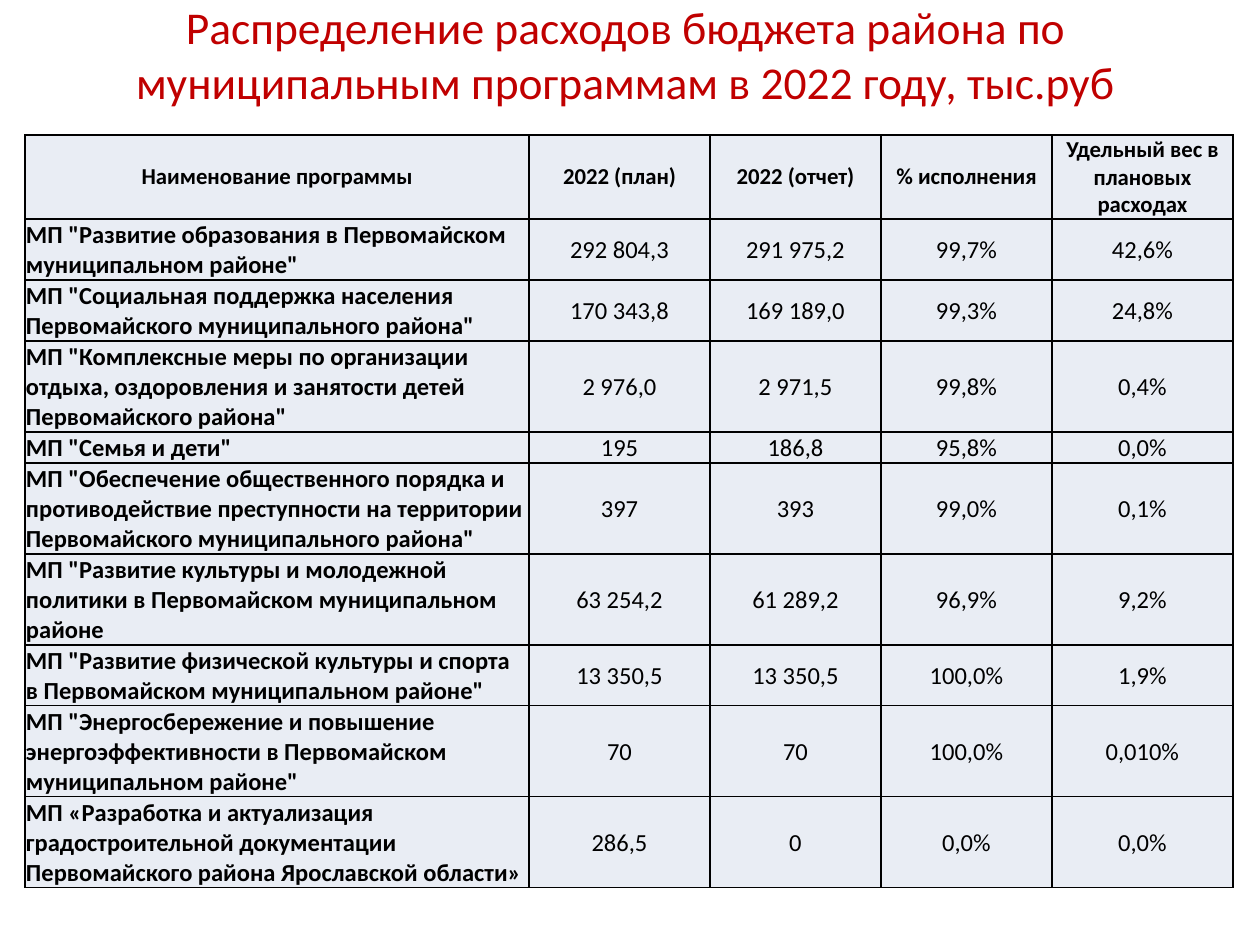
from lxml import etree
from pptx import Presentation
from pptx.dml.color import RGBColor
from pptx.enum.text import MSO_ANCHOR, MSO_AUTO_SIZE, PP_ALIGN
from pptx.oxml.ns import qn
from pptx.util import Pt

LEFT, CENTER = PP_ALIGN.LEFT, PP_ALIGN.CENTER
MIDDLE, BOTTOM = MSO_ANCHOR.MIDDLE, MSO_ANCHOR.BOTTOM
RED = RGBColor(0xC0, 0x00, 0x00)
BLACK = RGBColor(0x00, 0x00, 0x00)
PALE = RGBColor(0xE9, 0xED, 0xF4)
FONT = "Calibri"
SCALE = 914400 / 126

# Content
TITLE = "Распределение расходов бюджета района по муниципальным программам в 2022 году, тыс.руб"
HEAD = ("Наименование программы", "2022 (план)", "2022 (отчет)",
        "% исполнения", "Удельный вес в плановых расходах")
# Each program: number of text lines in its name, then the cells
PROGRAMS = [
    (2, 'МП "Развитие образования в Первомайском муниципальном районе"',
     "292 804,3", "291 975,2", "99,7%", "42,6%"),
    (2, 'МП "Социальная поддержка населения Первомайского муниципального района"',
     "170 343,8", "169 189,0", "99,3%", "24,8%"),
    (3, 'МП "Комплексные меры по организации отдыха, оздоровления и занятости детей Первомайского района"',
     "2 976,0", "2 971,5", "99,8%", "0,4%"),
    (1, 'МП "Семья и дети"', "195", "186,8", "95,8%", "0,0%"),
    (3, 'МП "Обеспечение общественного порядка и противодействие преступности на территории Первомайского муниципального района"',
     "397", "393", "99,0%", "0,1%"),
    (3, 'МП "Развитие культуры и молодежной политики в Первомайском муниципальном районе',
     "63 254,2", "61 289,2", "96,9%", "9,2%"),
    (2, 'МП "Развитие физической культуры и спорта в Первомайском муниципальном районе"',
     "13 350,5", "13 350,5", "100,0%", "1,9%"),
    (3, 'МП "Энергосбережение и повышение энергоэффективности в Первомайском муниципальном районе"',
     "70", "70", "100,0%", "0,010%"),
    (3, "МП «Разработка и актуализация градостроительной документации Первомайского района Ярославской области»",
     "286,5", "0", "0,0%", "0,0%"),
]

# Layout in px
TITLE_BOX = (44, 4, 1164, 100)
TABLE_AT = (25, 135)
COLS = (504, 181, 171, 171, 181)
HEAD_H, LINE_H = 84, 30

HEAD_FONT = {"size": Pt(13), "bold": True}
NAME_FONT = {"size": Pt(14), "bold": True}
VALUE_FONT = {"size": Pt(14), "bold": False}


def px(n):
    return round(n * SCALE)


def apply(item, values):
    for name, value in values.items():
        setattr(item, name, value)


def style(para, align, color, font):
    para.alignment = align
    apply(para.font, {"name": FONT, **font})
    para.font.color.rgb = color


def border(cell):
    props = cell._tc.get_or_add_tcPr()
    for side in ("a:lnL", "a:lnR", "a:lnT", "a:lnB"):
        line = etree.SubElement(props, qn(side), w=str(Pt(1)))
        fill = etree.SubElement(line, qn("a:solidFill"))
        etree.SubElement(fill, qn("a:srgbClr"), val=str(BLACK))


def fill_cell(cell, text, font, align, anchor, inset):
    cell.text = text
    style(cell.text_frame.paragraphs[0], align, BLACK, font)
    apply(cell, {"vertical_anchor": anchor, "margin_left": inset,
                 "margin_right": inset, "margin_top": inset, "margin_bottom": 0})
    border(cell)
    cell.fill.solid()
    cell.fill.fore_color.rgb = PALE


def main():
    deck = Presentation()
    apply(deck, {"slide_width": px(1260), "slide_height": px(945)})
    slide = deck.slides.add_slide(deck.slide_layouts[5])

    # Title
    title = slide.shapes.title
    apply(title, dict(zip(("left", "top", "width", "height"), map(px, TITLE_BOX))))
    frame = title.text_frame
    frame.text = TITLE
    apply(frame, {"word_wrap": True, "vertical_anchor": MIDDLE,
                  "auto_size": MSO_AUTO_SIZE.NONE})
    style(frame.paragraphs[0], CENTER, RED, {"size": Pt(26)})

    # Table grid
    heights = [HEAD_H] + [LINE_H * row[0] + 1 for row in PROGRAMS]
    box = (*TABLE_AT, sum(COLS), sum(heights))
    table = slide.shapes.add_table(len(heights), len(COLS), *map(px, box)).table
    apply(table, {"first_row": False, "horz_banding": False})
    for col, width in zip(table.columns, COLS):
        col.width = px(width)
    for row, height in zip(table.rows, heights):
        row.height = px(height)

    # Header row
    for c, text in enumerate(HEAD):
        anchor = BOTTOM if c == len(HEAD) - 1 else MIDDLE
        fill_cell(table.cell(0, c), text, HEAD_FONT, CENTER, anchor, 0)

    # Program rows
    for r, (_, name, *values) in enumerate(PROGRAMS, 1):
        fill_cell(table.cell(r, 0), name, NAME_FONT, LEFT, BOTTOM, px(1))
        for c, text in enumerate(values, 1):
            fill_cell(table.cell(r, c), text, VALUE_FONT, CENTER, MIDDLE, px(1))

    deck.save("out.pptx")


if __name__ == "__main__":
    main()
